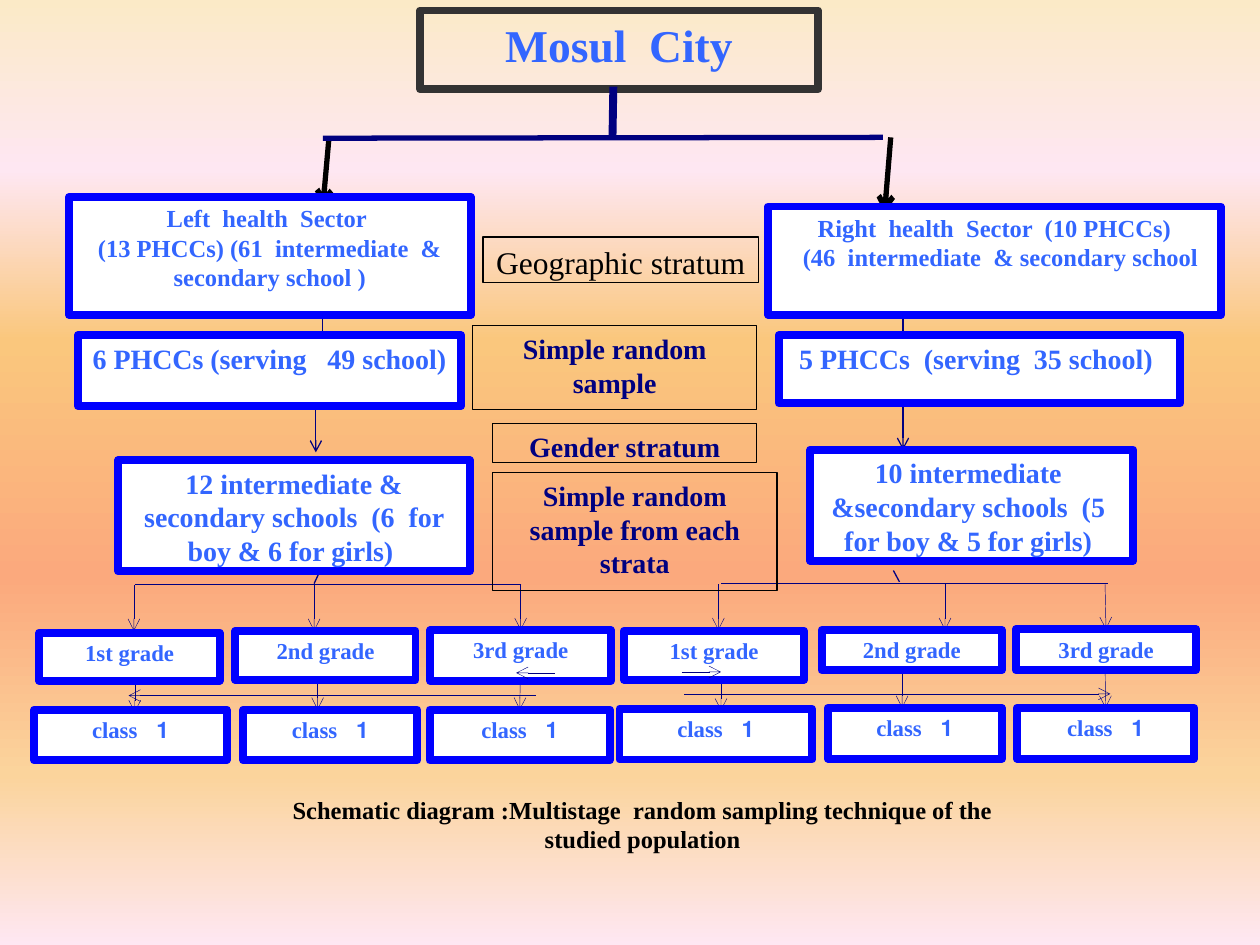
from dataclasses import dataclass

from lxml.etree import SubElement
from pptx import Presentation
from pptx.dml.color import RGBColor
from pptx.enum.shapes import MSO_CONNECTOR, MSO_SHAPE
from pptx.enum.text import MSO_ANCHOR, MSO_AUTO_SIZE, PP_ALIGN
from pptx.oxml.ns import qn
from pptx.util import Pt


@dataclass(frozen=True)
class Theme:
    font: str = "Times New Roman"
    white: str = "FFFFFF"
    black: str = "000000"
    frame: str = "0000FF"
    label: str = "3366FF"
    navy: str = "000080"
    charcoal: str = "333333"
    title_size: float = 26
    stratum_size: float = 18
    step_size: float = 16
    sector_size: float = 14
    grade_size: float = 13
    thick: float = 4.5
    medium: float = 3
    thin: float = 0.75
    hairline: float = 0.25
    sky: tuple = ((0, "FBEAC7"), (18, "FEE7F2"), (36, "FAC77D"),
                  (61, "FBA97D"), (82, "FBD49C"), (100, "FEE7F2"))


class Diagram:
    def __init__(self, page, theme):
        self.page = page
        self.theme = theme
        self.boxes = []

    def background(self):
        fill = self.page.background.fill
        fill.gradient()
        fill.gradient_angle = 270
        stops = self.page.element.find(".//" + qn("a:gsLst"))
        for stop in list(stops):
            stops.remove(stop)
        for percent, color in self.theme.sky:
            stop = SubElement(stops, qn("a:gs"), pos=str(percent * 1000))
            SubElement(stop, qn("a:srgbClr"), val=color)

    def set_text(self, shape, text, size, color, bold=True, rtl=False):
        frame = shape.text_frame
        frame.word_wrap = True
        frame.auto_size = MSO_AUTO_SIZE.NONE
        frame.vertical_anchor = MSO_ANCHOR.TOP
        frame.text = text
        for paragraph in frame.paragraphs:
            paragraph.alignment = PP_ALIGN.CENTER
            paragraph.font.name = self.theme.font
            paragraph.font.size = Pt(size)
            paragraph.font.bold = bold
            paragraph.font.color.rgb = RGBColor.from_string(color)
            if rtl:
                paragraph._p.get_or_add_pPr().set("rtl", "1")

    def outline(self, shape, color, width):
        shape.line.color.rgb = RGBColor.from_string(color)
        shape.line.width = Pt(width)

    def title(self, text, place):
        box = self.page.shapes.title
        box.left, box.top, box.width, box.height = map(Pt, place)
        self.outline(box, self.theme.charcoal, self.theme.thick)
        self.set_text(box, text, self.theme.title_size, self.theme.label, rtl=True)

    def rectangle(self, place):
        box = self.page.shapes.add_shape(MSO_SHAPE.RECTANGLE, *map(Pt, place))
        box.shadow.inherit = False
        self.boxes.append(box)
        return box

    def box(self, text, place, size, rtl=False):
        box = self.rectangle(place)
        box.fill.solid()
        box.fill.fore_color.rgb = RGBColor.from_string(self.theme.white)
        self.outline(box, self.theme.frame, self.theme.thick)
        self.set_text(box, text, size, self.theme.label, rtl=rtl)
        return box

    def stage(self, text, place, size, color, bold=True):
        box = self.rectangle(place)
        box.fill.background()
        self.outline(box, self.theme.black, self.theme.thin)
        self.set_text(box, text, size, color, bold)

    def caption(self, text, place):
        box = self.page.shapes.add_textbox(*map(Pt, place))
        self.set_text(box, text, self.theme.sector_size, self.theme.black, rtl=True)

    def attach(self, connect, x, y):
        for box in self.boxes:
            middle = box.left + box.width // 2, box.top + box.height // 2
            sides = ((middle[0], box.top), (box.left, middle[1]),
                     (middle[0], box.top + box.height), (box.left + box.width, middle[1]))
            for site, (side_x, side_y) in enumerate(sides):
                if max(abs(side_x - Pt(x)), abs(side_y - Pt(y))) < Pt(2):
                    connect(box, site)

    def line(self, start, end, width, color=None, arrow=False, behind=True):
        line = self.page.shapes.add_connector(
            MSO_CONNECTOR.STRAIGHT, *map(Pt, (*start, *end)))
        self.outline(line, color or self.theme.navy, width)
        properties = line._element.spPr
        if arrow:
            SubElement(properties.find(qn("a:ln")), qn("a:tailEnd"), type="arrow")
        SubElement(properties, qn("a:effectLst"))
        self.attach(line.begin_connect, *start)
        self.attach(line.end_connect, *end)
        if behind:
            self.page.shapes._spTree.insert(2, line._element)


def main():
    deck = Presentation()
    deck.slide_width, deck.slide_height = Pt(720), Pt(540)
    theme = Theme()
    diagram = Diagram(deck.slides.add_slide(deck.slide_layouts[5]), theme)
    diagram.background()
    diagram.title("Mosul  City", (240, 6, 227.5, 45))

    right_sector = diagram.box(
        "Right  health  Sector  (10 PHCCs)  \n(46  intermediate  & secondary school",
        (439, 118, 258.5, 62), theme.sector_size)
    right_sector.text_frame.margin_right = 0
    diagram.box(
        "Left  health  Sector \n(13 PHCCs) (61  intermediate  & secondary school )",
        (39.5, 112.5, 229.5, 67.5), theme.sector_size)

    for text, place in (
        ("5 PHCCs  (serving  35 school) ", (445, 191.5, 229.5, 39)),
        ("6 PHCCs (serving   49 school)", (44.5, 191.5, 219, 40.5)),
        ("10 intermediate  &secondary schools  (5  for boy & 5 for girls) ",
         (463, 257, 184.5, 63.5)),
        ("12 intermediate & secondary schools  (6  for boy & 6 for girls) ",
         (67.5, 263, 201, 63.5)),
    ):
        diagram.box(text, place, theme.step_size)

    diagram.stage("Geographic stratum", (276, 135.5, 157.5, 26),
                  theme.stratum_size, theme.black, bold=False)
    for text, place in (
        ("Simple random sample", (270, 186, 162.5, 48)),
        ("Gender stratum", (281.5, 242, 151, 22.5)),
        ("Simple random sample from each strata", (281.5, 270, 162.5, 67.5)),
    ):
        diagram.stage(text, place, theme.step_size, theme.navy)

    grades = ("1st grade", "2nd grade", "3rd grade") * 2
    grade_places = ((22.5, 361.5, 27.5), (134.5, 360.5, 28), (246, 360, 29),
                    (356.5, 360.5, 28), (469.5, 360, 23), (580.5, 359.5, 23.5))
    class_places = ((19.5, 405.5, 110), (139, 405.5, 99.5), (245.5, 405.5, 103),
                    (354, 405, 110), (473, 404.5, 99.5), (581, 404.5, 101.5))
    for grade, (left, top, height) in zip(grades, grade_places):
        diagram.box(grade, (left, top, 103, height), theme.grade_size, rtl=True)
    for left, top, width in class_places:
        diagram.box("1   class", (left, top, width, 29), theme.grade_size, rtl=True)

    diagram.line((350.5, 49.5), (350, 78.5), theme.thick, behind=False)
    diagram.line((504.5, 78.5), (184.5, 79), theme.medium)
    for start, end in (((509, 78.5), (505.5, 121.5)), ((188, 78.5), (184.5, 118))):
        diagram.line(start, end, theme.medium, theme.black, arrow=True)

    for x, y in ((516, 180.5), (184.5, 180.5), (516, 231), (180.5, 232.5)):
        diagram.line((x, y), (x, y + 26), theme.thin, arrow=True)
    for start, end in (((510.5, 326), (514, 332.5)), ((183, 326), (179.5, 333.5))):
        diagram.line(start, end, theme.thin)
    for start, end in (((633, 333.5), (412, 333.5)), ((298, 334), (77, 334))):
        diagram.line(start, end, theme.hairline)

    grade_drops = ((76.5, 334.5), (179.5, 334.5), (297.5, 334.5),
                   (410.5, 334), (540, 334), (631.5, 334))
    class_drops = ((77, 381), (181.5, 379.5), (297.5, 378.5),
                   (412, 380), (515.5, 378.5), (631.5, 378))
    for x, y in grade_drops + class_drops:
        diagram.line((x, y), (x, y + 26), theme.hairline, arrow=True)

    for y, start, end in ((397.5, 306, 73.5), (384.5, 317, 295),
                          (384, 389.5, 412), (396.5, 391, 634.5)):
        diagram.line((start, y), (end, y), theme.hairline, arrow=True, behind=False)

    diagram.caption(
        "Schematic diagram :Multistage  random sampling technique of the studied population",
        (140.5, 450.5, 453.5, 46))
    deck.save("out.pptx")


if __name__ == "__main__":
    main()
